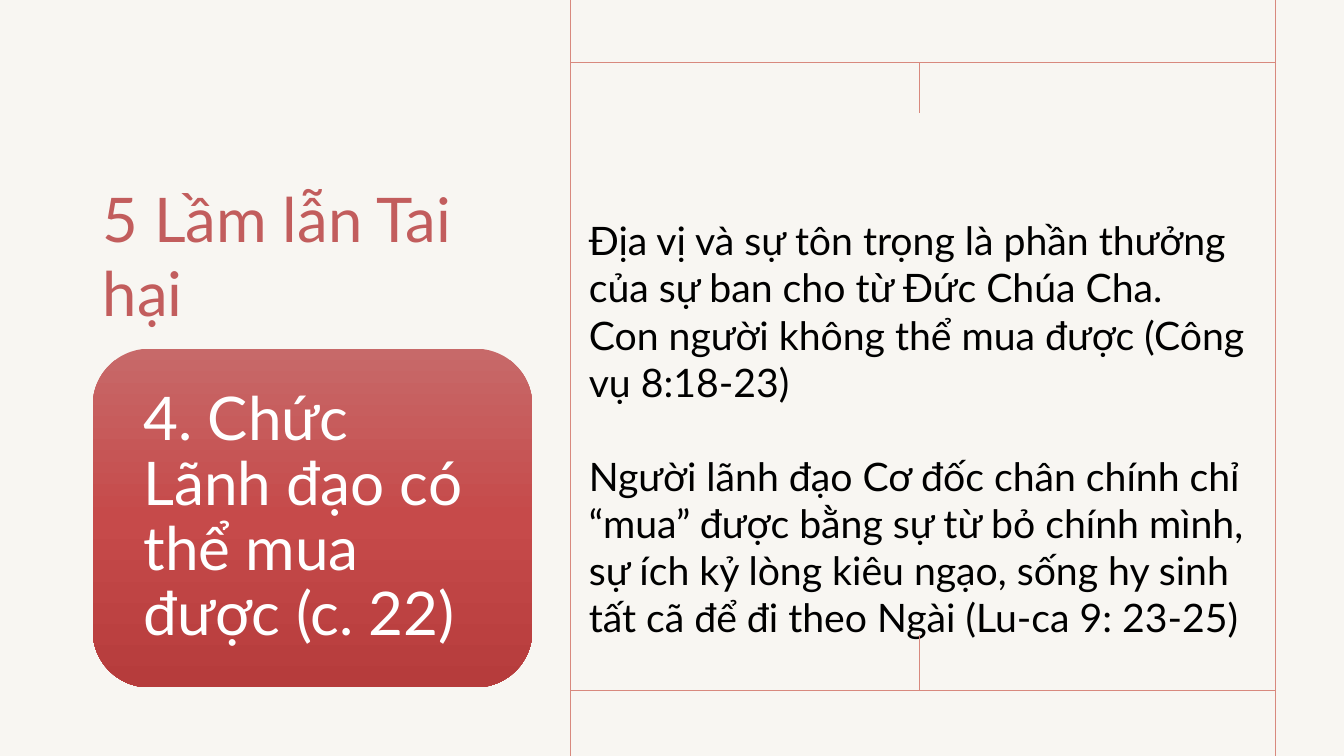
from copy import deepcopy
from dataclasses import dataclass

from lxml import etree
from pptx import Presentation
from pptx.dml.color import RGBColor
from pptx.enum.shapes import MSO_CONNECTOR, MSO_SHAPE
from pptx.enum.text import MSO_ANCHOR, MSO_AUTO_SIZE, PP_ALIGN
from pptx.oxml.ns import qn
from pptx.util import Inches, Pt

STRAIGHT = MSO_CONNECTOR.STRAIGHT
ROUNDED = MSO_SHAPE.ROUNDED_RECTANGLE
TOP, MIDDLE, BOTTOM = MSO_ANCHOR.TOP, MSO_ANCHOR.MIDDLE, MSO_ANCHOR.BOTTOM
LEFT = PP_ALIGN.LEFT
NO_FIT = MSO_AUTO_SIZE.NONE

FONT = "Lato"
CREAM = RGBColor(0xF8, 0xF6, 0xF2)
CORAL = RGBColor(0xD8, 0x89, 0x7E)
ROSE = RGBColor(0xC2, 0x5D, 0x5D)
WHITE = RGBColor(0xFF, 0xFF, 0xFF)
BLACK = RGBColor(0x00, 0x00, 0x00)
CARD_COLOURS = (
    RGBColor(0xC7, 0x69, 0x69),
    RGBColor(0xC6, 0x4A, 0x4A),
    RGBColor(0xB6, 0x3C, 0x3C),
)

WIDTH, HEIGHT = 13.33, 7.5
FRAME_LEFT, FRAME_RIGHT = 5.66, 12.65
FRAME_TOP, FRAME_BOTTOM = 0.62, 6.85
FRAME_MIDDLE = 9.12


@dataclass(frozen=True)
class Rule:
    x1: float
    y1: float
    x2: float
    y2: float


@dataclass(frozen=True)
class Passage:
    text: str
    size: float
    colour: RGBColor
    line_spacing: float = 1.0
    space_before: float = 0


@dataclass(frozen=True)
class Place:
    left: float
    top: float
    width: float
    height: float


RULES = (
    Rule(FRAME_MIDDLE, 6.3, FRAME_MIDDLE, FRAME_BOTTOM),
    Rule(FRAME_MIDDLE, FRAME_TOP, FRAME_MIDDLE, 1.12),
    Rule(FRAME_LEFT, 0, FRAME_LEFT, HEIGHT),
    Rule(FRAME_RIGHT, 0, FRAME_RIGHT, HEIGHT),
    Rule(FRAME_LEFT, FRAME_TOP, FRAME_RIGHT, FRAME_TOP),
    Rule(FRAME_LEFT, FRAME_BOTTOM, FRAME_RIGHT, FRAME_BOTTOM),
)
TITLE = (Passage("5 Lầm lẫn Tai hại", 44, ROSE),)
CARD = (Passage("4. Chức Lãnh đạo có thể mua được (c. 22)", 43, WHITE, 0.9),)
BODY = (
    Passage("Địa vị và sự tôn trọng là phần thưởng của sự ban cho từ Đức Chúa Cha.", 28, BLACK),
    Passage("Con người không thể mua được (Công vụ 8:18-23)", 28, BLACK),
    Passage(
        "Người lãnh đạo Cơ đốc chân chính chỉ “mua” được bằng sự từ bỏ chính mình, "
        "sự ích kỷ lòng kiêu ngạo, sống hy sinh tất cã để đi theo Ngài (Lu-ca 9: 23-25)",
        28, BLACK, space_before=33.6,
    ),
)


def draw_rule(page, rule: Rule) -> None:
    line = page.shapes.add_connector(
        STRAIGHT, Inches(rule.x1), Inches(rule.y1), Inches(rule.x2), Inches(rule.y2)
    )
    line.line.color.rgb = CORAL
    line.line.width = Pt(1)
    etree.SubElement(line._element.spPr, qn("a:effectLst"))


def move(box, place: Place) -> None:
    box.left, box.top = Inches(place.left), Inches(place.top)
    box.width, box.height = Inches(place.width), Inches(place.height)


def write(box, passages: tuple[Passage, ...], anchor, margin_x: float = 0.1) -> None:
    frame = box.text_frame
    frame.word_wrap = True
    frame.auto_size = NO_FIT
    frame.vertical_anchor = anchor
    frame.margin_left = frame.margin_right = Inches(margin_x)
    frame.margin_top = frame.margin_bottom = Inches(0.05)
    for index, passage in enumerate(passages):
        para = frame.add_paragraph() if index else frame.paragraphs[0]
        para.alignment = LEFT
        para.line_spacing = passage.line_spacing
        para.space_before = Pt(passage.space_before)
        para.space_after = Pt(0)
        properties = para._p.get_or_add_pPr()
        properties.set("marL", "0")
        properties.set("indent", "0")
        etree.SubElement(properties, qn("a:buNone"))
        span = para.add_run()
        span.text = passage.text
        span.font.name = FONT
        span.font.size = Pt(passage.size)
        span.font.color.rgb = passage.colour


def draw_card(page, place: Place) -> None:
    card = page.shapes.add_shape(ROUNDED, 0, 0, 0, 0)
    move(card, place)
    card.shadow.inherit = False
    card.line.fill.background()
    card.fill.gradient()
    card.fill.gradient_angle = 270
    first_stop = card._element.spPr.find(".//" + qn("a:gs"))
    first_stop.addnext(deepcopy(first_stop))
    for index, (stop, colour) in enumerate(zip(card.fill.gradient_stops, CARD_COLOURS)):
        stop.position = index / 2
        stop.color.rgb = colour
    write(card, CARD, MIDDLE, 0.34)


def main() -> None:
    deck = Presentation()
    deck.slide_width, deck.slide_height = Inches(WIDTH), Inches(HEIGHT)
    page = deck.slides.add_slide(deck.slide_layouts[1])
    page.background.fill.solid()
    page.background.fill.fore_color.rgb = CREAM

    title, body = page.shapes.title, page.placeholders[1]
    move(title, Place(0.92, 0.62, 4.36, 2.69))
    write(title, TITLE, BOTTOM)
    move(body, Place(5.74, 2.1, 6.77, 4.7))
    write(body, BODY, TOP)

    for rule in RULES:
        draw_rule(page, rule)
    draw_card(page, Place(0.92, 3.46, 4.36, 3.36))
    deck.save("out.pptx")


if __name__ == "__main__":
    main()
